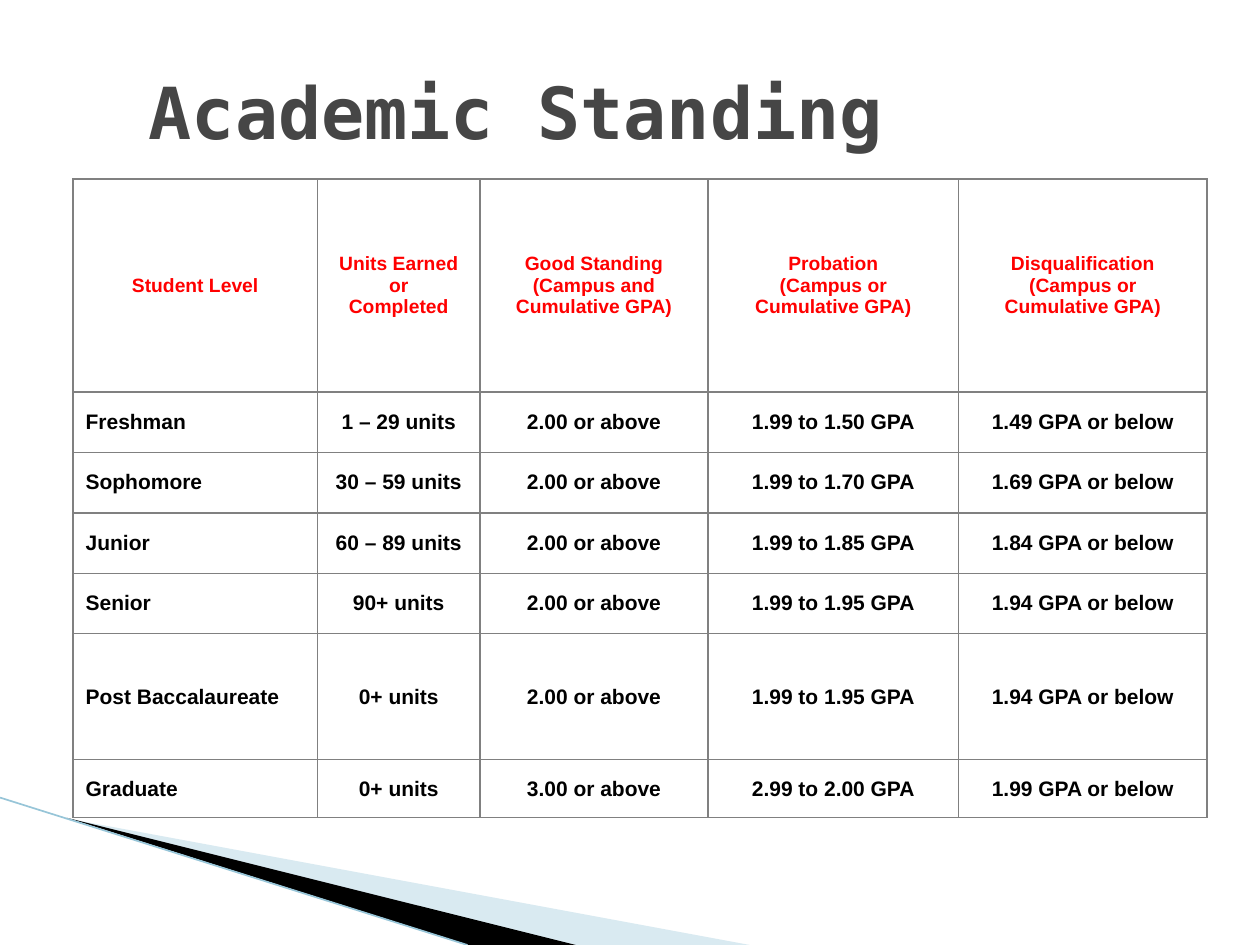
from dataclasses import dataclass

from lxml.etree import SubElement
from pptx import Presentation
from pptx.dml.color import RGBColor
from pptx.enum.shapes import MSO_CONNECTOR
from pptx.enum.text import MSO_ANCHOR, PP_ALIGN
from pptx.oxml.ns import qn
from pptx.util import Inches, Pt

COLUMNS, ROWS = 100, 75
UNIT = Inches(10) // COLUMNS


@dataclass(frozen=True)
class Theme:
    """Colours, fonts and type sizes of the slide."""
    title_font: str = "DejaVu Sans Mono"
    body_font: str = "Arial"
    title_size: float = 41
    heading_size: float = 11
    body_size: float = 12
    title: str = "464646"
    heading: str = "FF0000"
    ink: str = "000000"
    paper: str = "FFFFFF"
    border: str = "808080"
    pale_wedge: str = "A0CBDC"
    edge: str = "97C5D8"


@dataclass(frozen=True)
class Box:
    """A region measured in grid columns and rows."""
    left: float
    top: float
    width: float
    height: float

    def point(self, column, row):
        """Return the position of a grid point relative to this box."""
        return round((self.left + column) * UNIT), round((self.top + row) * UNIT)

    def frame(self):
        """Return left, top, width and height as lengths."""
        return (*self.point(0, 0), round(self.width * UNIT), round(self.height * UNIT))


THEME = Theme()
COLUMN_WIDTHS = [19.4, 12.9, 18.1, 19.9, 19.7]
ROW_HEIGHTS = [16.9, 4.8, 4.8, 4.8, 4.8, 10, 4.6]
STANDINGS = [
    ["Student Level", "Units Earned\nor\nCompleted",
     "Good Standing\n(Campus and\nCumulative GPA)",
     "Probation\n(Campus or\nCumulative GPA)",
     "Disqualification\n(Campus or\nCumulative GPA)"],
    ["Freshman", "1 – 29 units", "2.00 or above", "1.99 to 1.50 GPA", "1.49 GPA or below"],
    ["Sophomore", "30 – 59 units", "2.00 or above", "1.99 to 1.70 GPA", "1.69 GPA or below"],
    ["Junior", "60 – 89 units", "2.00 or above", "1.99 to 1.85 GPA", "1.84 GPA or below"],
    ["Senior", "90+ units", "2.00 or above", "1.99 to 1.95 GPA", "1.94 GPA or below"],
    ["Post Baccalaureate", "0+ units", "2.00 or above", "1.99 to 1.95 GPA", "1.94 GPA or below"],
    ["Graduate", "0+ units", "3.00 or above", "2.99 to 2.00 GPA", "1.99 GPA or below"],
]


def write(text_frame, text, *, font, size, color, align=PP_ALIGN.LEFT, hang=0):
    """Fill a text frame with bold paragraphs, one for each line."""
    text_frame.text = text
    text_frame.word_wrap = True
    for paragraph in text_frame.paragraphs:
        paragraph.alignment = align
        if hang:
            properties = paragraph._p.get_or_add_pPr()
            properties.set("marL", str(hang))
            properties.set("indent", str(-hang))
        for run in paragraph.runs:
            run.font.name = font
            run.font.size = Pt(size)
            run.font.bold = True
            run.font.color.rgb = RGBColor.from_string(color)


def add_wedge(slide, box, points, color, opacity=100):
    """Draw one filled wedge through points relative to the box."""
    start, *others = [box.point(*point) for point in points]
    builder = slide.shapes.build_freeform(*start)
    builder.add_line_segments(others, close=True)
    wedge = builder.convert_to_shape()
    wedge.shadow.inherit = False
    wedge.line.fill.background()
    wedge.fill.solid()
    wedge.fill.fore_color.rgb = RGBColor.from_string(color)
    if opacity < 100:
        tint = wedge._element.spPr.find(".//" + qn("a:srgbClr"))
        SubElement(tint, qn("a:alpha"), val=str(opacity * 1000))


def add_corner(slide, box):
    """Draw the two wedges and the edge line of the bottom corner."""
    add_wedge(slide, box, [(5.5, 1.7), (59.5, 11.7), (45.6, 11.7)], THEME.pale_wedge, 40)
    add_wedge(slide, box, [(5.3, 1.6), (45.7, 11.7), (37.2, 11.7)], THEME.ink)
    edge = slide.shapes.add_connector(
        MSO_CONNECTOR.STRAIGHT, *box.point(0, 0), *box.point(37.1, box.height))
    edge.line.color.rgb = RGBColor.from_string(THEME.edge)
    edge.line.width = Pt(0.95)
    SubElement(edge._element.spPr, qn("a:effectLst"))


def add_title(slide, box):
    """Place and format the slide title."""
    title = slide.shapes.title
    title.left, title.top, title.width, title.height = box.frame()
    title.text_frame.vertical_anchor = MSO_ANCHOR.MIDDLE
    write(title.text_frame, "Academic Standing", font=THEME.title_font,
          size=THEME.title_size, color=THEME.title)


def add_borders(cell):
    """Outline all four sides of a table cell."""
    properties = cell._tc.get_or_add_tcPr()
    for side in ("lnL", "lnR", "lnT", "lnB"):
        line = SubElement(properties, qn("a:" + side), w=str(Pt(1)))
        fill = SubElement(line, qn("a:solidFill"))
        SubElement(fill, qn("a:srgbClr"), val=THEME.border)


def add_standings(slide, box):
    """Build the table of standings by student level."""
    table = slide.shapes.add_table(len(STANDINGS), len(COLUMN_WIDTHS), *box.frame()).table
    table.horz_banding = False
    for column, width in zip(table.columns, COLUMN_WIDTHS):
        column.width = round(width * UNIT)
    for row, height in zip(table.rows, ROW_HEIGHTS):
        row.height = round(height * UNIT)
    for row_index, texts in enumerate(STANDINGS):
        heading = row_index == 0
        for column_index, text in enumerate(texts):
            cell = table.cell(row_index, column_index)
            add_borders(cell)
            cell.fill.solid()
            cell.fill.fore_color.rgb = RGBColor.from_string(THEME.paper)
            cell.vertical_anchor = MSO_ANCHOR.MIDDLE
            write(cell.text_frame, text, font=THEME.body_font,
                  size=THEME.heading_size if heading else THEME.body_size,
                  color=THEME.heading if heading else THEME.ink,
                  align=PP_ALIGN.CENTER if heading or column_index else PP_ALIGN.LEFT,
                  hang=Inches(0.38))


def main():
    """Build and save the slide."""
    presentation = Presentation()
    presentation.slide_width = COLUMNS * UNIT
    presentation.slide_height = ROWS * UNIT
    slide = presentation.slides.add_slide(presentation.slide_layouts.get_by_name("Title Only"))
    add_corner(slide, Box(0, 63.3, 59.5, 11.7))
    add_title(slide, Box(10.8, 4.2, 76.7, 9.2))
    add_standings(slide, Box(5.8, 14.2, sum(COLUMN_WIDTHS), sum(ROW_HEIGHTS)))
    presentation.save("out.pptx")


if __name__ == "__main__":
    main()
